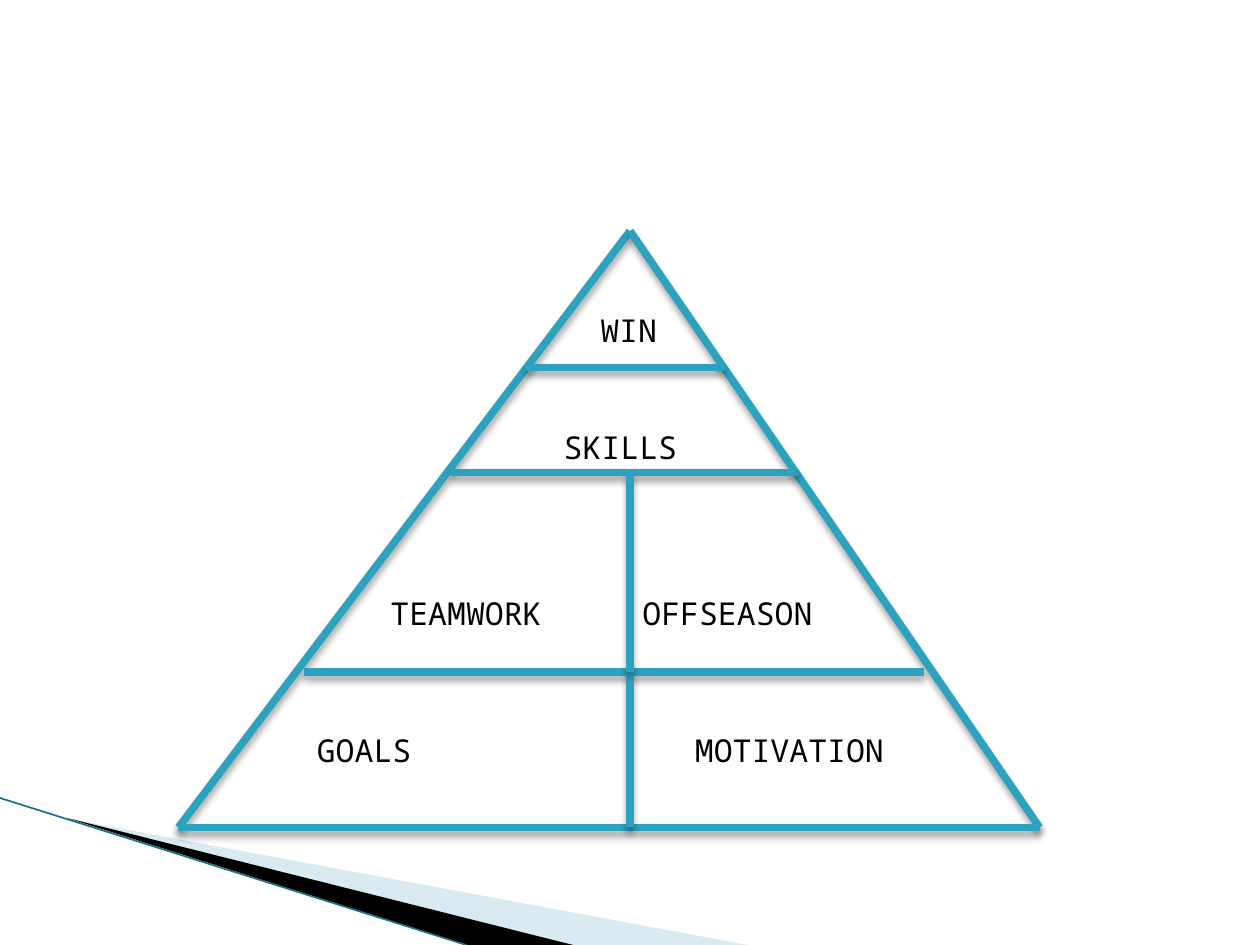
from lxml.etree import SubElement
from pptx import Presentation
from pptx.dml.color import RGBColor
from pptx.enum.shapes import MSO_CONNECTOR
from pptx.enum.text import MSO_AUTO_SIZE
from pptx.oxml.ns import qn
from pptx.util import Inches, Pt

TEAL = RGBColor(0x2D, 0xA2, 0xBF)
DARK_TEAL = RGBColor(0x1B, 0x70, 0x84)
PALE_BLUE = RGBColor(0xA0, 0xCB, 0xDC)
BLACK = RGBColor(0, 0, 0)

COLUMNS, ROWS = 120, 90
APEX, MIDDLE = 22, 60
SKILLS_BASE, TEAM_BASE, BASE = 45, 64, 78.8
LABEL_HEIGHT = 4.8


class PyramidSlide:
    label_font = {"name": "Noto Sans Mono", "size": Pt(18)}
    frame_format = {"word_wrap": True, "auto_size": MSO_AUTO_SIZE.SHAPE_TO_FIT_TEXT}

    def __init__(self, deck):
        self.page = deck.slides.add_slide(deck.slide_layouts[6])
        self.column = deck.slide_width / COLUMNS
        self.row = deck.slide_height / ROWS

    def place(self, column, row):
        return round(column * self.column), round(row * self.row)

    def wedge(self, corners, color, opacity=100):
        start, *others = [self.place(*corner) for corner in corners]
        builder = self.page.shapes.build_freeform(*start)
        builder.add_line_segments(others)
        shape = builder.convert_to_shape()
        shape.shadow.inherit = False
        shape.fill.solid()
        shape.fill.fore_color.rgb = color
        shape.line.fill.background()
        if opacity < 100:
            fill_color = shape.fill._xPr.find(".//" + qn("a:srgbClr"))
            SubElement(fill_color, qn("a:alpha"), val=str(opacity * 1000))

    def line(self, start, end, color=TEAL, width=4.33, shadow=True):
        connector = self.page.shapes.add_connector(
            MSO_CONNECTOR.STRAIGHT, *self.place(*start), *self.place(*end))
        connector.line.color.rgb = color
        connector.line.width = Pt(width)
        effects = SubElement(connector._element.spPr, qn("a:effectLst"))
        if shadow:
            outer = SubElement(effects, qn("a:outerShdw"), blurRad=str(Pt(4)),
                               dist=str(Pt(3)), dir="5400000", rotWithShape="0")
            shade = SubElement(outer, qn("a:srgbClr"), val=str(BLACK))
            SubElement(shade, qn("a:alpha"), val="35000")

    def label(self, text, column, row, width):
        box = self.page.shapes.add_textbox(
            *self.place(column, row), *self.place(width, LABEL_HEIGHT))
        for name, value in self.frame_format.items():
            setattr(box.text_frame, name, value)
        para = box.text_frame.paragraphs[0]
        span = para.add_run()
        span.text = text
        for name, value in self.label_font.items():
            setattr(span.font, name, value)
        span.font.color.rgb = BLACK


def main():
    deck = Presentation()
    deck.slide_width, deck.slide_height = Inches(10), Inches(7.5)
    slide = PyramidSlide(deck)

    slide.wedge([(6.6, 78), (71.2, 90), (54.6, 90)], PALE_BLUE, opacity=40)
    slide.wedge([(6.4, 77.9), (54.6, 90), (44.5, 90)], BLACK)
    slide.line((0, 76), (44.4, 90), DARK_TEAL, width=0.95, shadow=False)

    for foot in (17, 99):
        slide.line((MIDDLE, APEX), (foot, BASE))
    for left, right, row in ((17, 99, BASE), (29, 88, TEAM_BASE),
                             (43, 76, SKILLS_BASE), (50, 69, 35)):
        slide.line((left, row), (right, row))
    for top, bottom in ((TEAM_BASE, BASE), (SKILLS_BASE, TEAM_BASE)):
        slide.line((MIDDLE, top), (MIDDLE, bottom))

    for text, column, row, width in (
            ("GOALS", 29, 69, 24), ("MOTIVATION", 65, 69, 22),
            ("TEAMWORK", 36, 56, 20), ("OFFSEASON", MIDDLE, 56, 23),
            ("SKILLS", 52.5, 40.2, 15), ("WIN", 56, 29, 12)):
        slide.label(text, column, row, width)

    deck.save("out.pptx")


if __name__ == "__main__":
    main()
